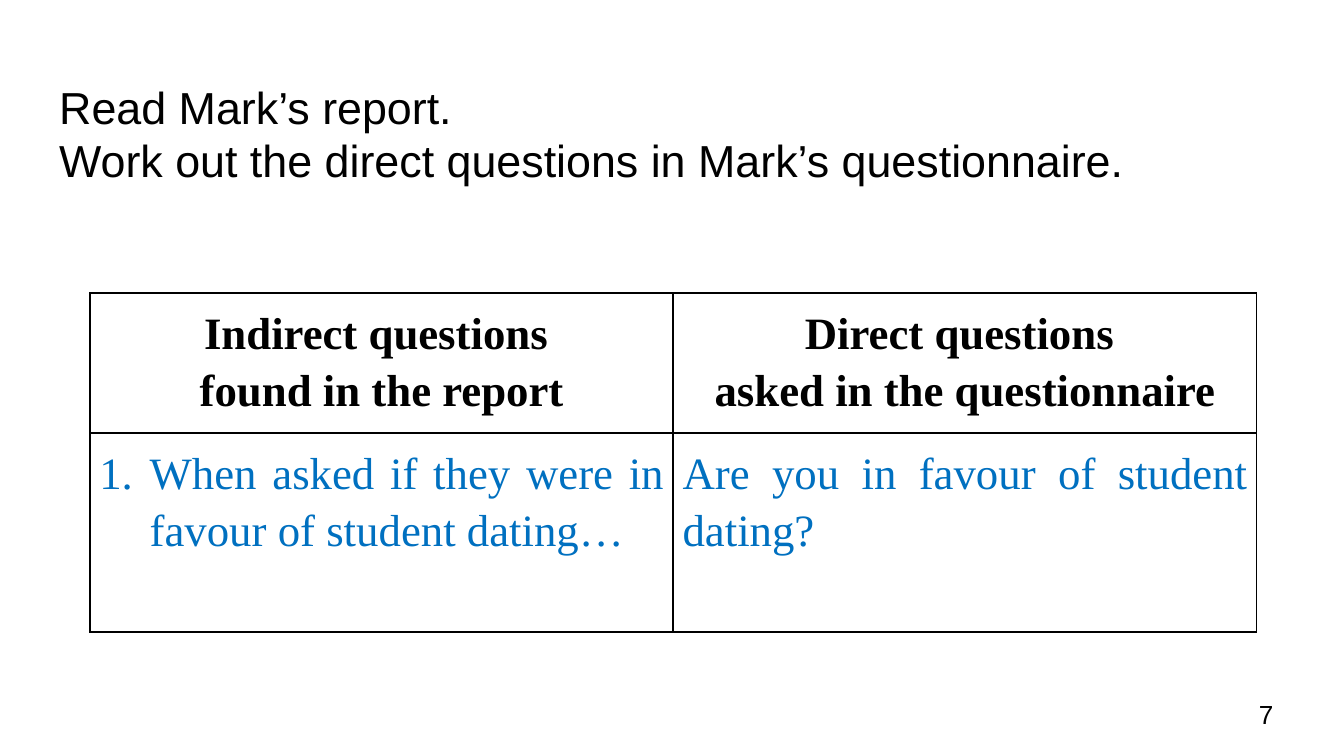
from lxml.etree import SubElement
from pptx import Presentation
from pptx.dml.color import RGBColor
from pptx.enum.text import MSO_ANCHOR, MSO_AUTO_SIZE, PP_ALIGN
from pptx.oxml.ns import qn
from pptx.util import Pt

BLACK, BLUE = "000000", "0070C0"
SANS, SERIF = "Arial", "Times New Roman"


def rgb(value):
    return RGBColor.from_string(value)


def add_run(p, text, size, font, color, bold=False):
    r = p.add_run()
    r.text = text
    r.font.size = Pt(size)
    r.font.name = font
    r.font.bold = bold
    r.font.color.rgb = rgb(color)


def set_frame(tf, margin, anchor):
    tf.word_wrap = True
    tf.auto_size = MSO_AUTO_SIZE.NONE
    tf.vertical_anchor = anchor
    tf.margin_left = tf.margin_right = tf.margin_top = tf.margin_bottom = Pt(margin)


def add_title(s, lines, x, y, w, h):
    sp = s.shapes.title
    sp.left, sp.top, sp.width, sp.height = Pt(x), Pt(y), Pt(w), Pt(h)
    set_frame(sp.text_frame, 7.2, MSO_ANCHOR.TOP)
    p = sp.text_frame.paragraphs[0]
    p.alignment = PP_ALIGN.LEFT
    for i, line in enumerate(lines):
        if i:
            p.add_line_break()
        add_run(p, line, 24, SANS, BLACK)


def add_page_number(s, number, x, y, w, h):
    tf = s.shapes.add_textbox(Pt(x), Pt(y), Pt(w), Pt(h)).text_frame
    set_frame(tf, 7.2, MSO_ANCHOR.MIDDLE)
    add_run(tf.paragraphs[0], number, 14, SANS, BLACK)


def set_borders(cell, color, width):
    tcPr = cell._tc.get_or_add_tcPr()
    for i, side in enumerate(("a:lnL", "a:lnR", "a:lnT", "a:lnB")):
        ln = tcPr.makeelement(qn(side), {"w": str(Pt(width))})
        fill = SubElement(ln, qn("a:solidFill"))
        SubElement(fill, qn("a:srgbClr"), val=color)
        tcPr.insert(i, ln)


def number_paragraph(p, indent):
    pPr = p._p.get_or_add_pPr()
    pPr.set("marL", str(Pt(indent)))
    pPr.set("indent", str(Pt(-indent)))
    SubElement(pPr, qn("a:buFont"), typeface=SERIF)
    SubElement(pPr, qn("a:buAutoNum"), type="arabicPeriod")


def fill_cell(cell, lines, align, color, bold):
    cell.fill.background()
    set_borders(cell, BLACK, 1)
    cell.margin_left = cell.margin_right = Pt(5)
    cell.margin_top = cell.margin_bottom = Pt(5)
    tf = cell.text_frame
    for i, line in enumerate(lines):
        p = tf.add_paragraph() if i else tf.paragraphs[0]
        p.alignment = align
        p.line_spacing = 1.15
        add_run(p, line, 24, SERIF, color, bold)


def add_questions_table(s, headers, answers, x, y, w, row_heights):
    shape = s.shapes.add_table(2, len(headers), Pt(x), Pt(y), Pt(w), Pt(sum(row_heights)))
    table = shape.table
    table.first_row = table.horz_banding = False
    for row, height in zip(table.rows, row_heights):
        row.height = Pt(height)
    for c, (header, answer) in enumerate(zip(headers, answers)):
        table.columns[c].width = Pt(w / len(headers))
        fill_cell(table.cell(0, c), header, PP_ALIGN.CENTER, BLACK, True)
        fill_cell(table.cell(1, c), [answer], PP_ALIGN.JUSTIFY, BLUE, False)
    number_paragraph(table.cell(1, 0).text_frame.paragraphs[0], 27)


def main():
    prs = Presentation()
    prs.slide_width, prs.slide_height = Pt(720), Pt(405)
    s = prs.slides.add_slide(prs.slide_layouts[5])
    s.background.fill.solid()
    s.background.fill.fore_color.rgb = rgb("FFFFFF")

    add_title(s, ["Read Mark’s report. ",
                  "Work out the direct questions in Mark’s questionnaire."],
              24.5, 35.3, 671, 71.3)
    add_page_number(s, "7", 667.4, 367.2, 43.2, 31)
    add_questions_table(
        s,
        [["Indirect questions ", "found in the report"],
         ["Direct questions ", "asked in the questionnaire"]],
        ["When asked if they were in favour of student dating… ",
         "Are you in favour of student dating? "],
        48.2, 157, 625, [74.9, 106.6])
    prs.save("out.pptx")


if __name__ == "__main__":
    main()
